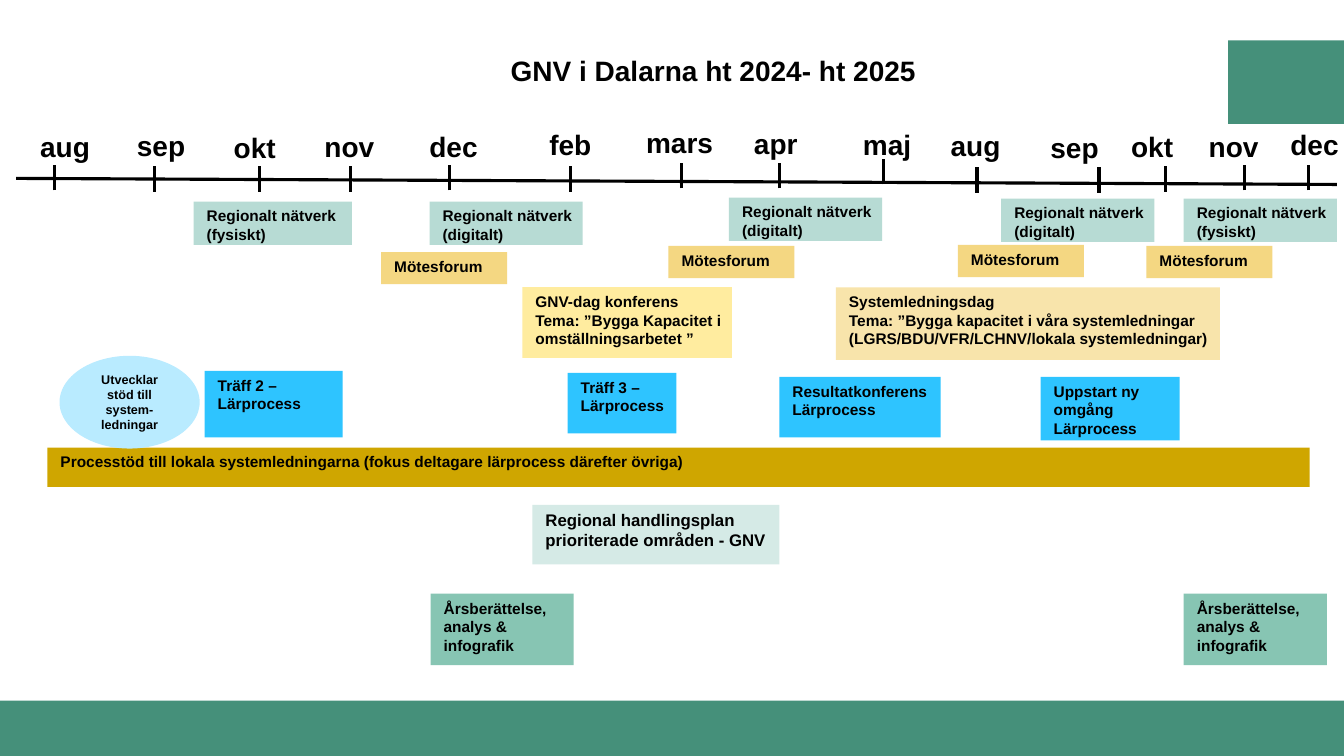
from dataclasses import dataclass
from typing import Any

import lxml.etree
import pptx
import pptx.dml.color
import pptx.enum.shapes
import pptx.enum.text
import pptx.oxml.ns
import pptx.util

Inches = pptx.util.Inches
Pt = pptx.util.Pt
Anchor = pptx.enum.text.MSO_ANCHOR
Align = pptx.enum.text.PP_ALIGN
Preset = pptx.enum.shapes.MSO_SHAPE

FONT = "Arial"
TICK_LENGTH = 0.25
AXIS_START, AXIS_END = (0.16, 1.77), (13.26, 1.83)

COLOURS = {
    "text": "000000",
    "brand": "45907A",
    "network": "B7DBD4",
    "forum": "F4D782",
    "conference": "FFEC9F",
    "leadership": "F8E4AB",
    "learning": "2EC4FF",
    "support": "B9EBFF",
    "process": "CFA600",
    "plan": "D5EAE6",
    "report": "87C5B3",
}

BOX_FRAME = {
    "word_wrap": True,
    "vertical_anchor": Anchor.TOP,
    "margin_left": Inches(0.13),
    "margin_right": Inches(0.08),
}
CENTRED_FRAME = {"word_wrap": True, "vertical_anchor": Anchor.MIDDLE}
TITLE_FRAME = {"word_wrap": True, "vertical_anchor": Anchor.BOTTOM}
LEFT_PARAGRAPH = {"alignment": Align.LEFT, "space_after": Pt(12)}
CENTRED_PARAGRAPH = {"alignment": Align.CENTER}
TITLE_PARAGRAPH = {"alignment": Align.CENTER, "line_spacing": 1.2, "space_before": Pt(10)}


@dataclass
class Month:
    name: str
    left: float
    top: float
    height: float
    tick_x: float
    tick_top: float


@dataclass
class Activity:
    text: str
    colour: str
    left: float
    top: float
    width: float
    height: float
    size: float = 11


MONTHS = [
    Month("aug", 0.3, 1.34, 0.22, 0.54, 1.64),
    Month("sep", 1.26, 1.33, 0.22, 1.53, 1.65),
    Month("okt", 2.22, 1.35, 0.22, 2.57, 1.65),
    Month("nov", 3.12, 1.34, 0.22, 3.48, 1.65),
    Month("dec", 4.16, 1.3, 0.3, 4.46, 1.64),
    Month("feb", 5.35, 1.28, 0.3, 5.66, 1.65),
    Month("mars", 6.31, 1.26, 0.3, 6.76, 1.62),
    Month("apr", 7.38, 1.26, 0.32, 7.73, 1.62),
    Month("maj", 8.46, 1.27, 0.32, 8.76, 1.58),
    Month("aug", 9.33, 1.33, 0.22, 9.69, 1.66),
    Month("sep", 10.32, 1.35, 0.22, 10.9, 1.66),
    Month("okt", 11.12, 1.34, 0.22, 11.56, 1.65),
    Month("nov", 11.89, 1.34, 0.22, 12.34, 1.64),
    Month("dec", 12.7, 1.32, 0.22, 12.98, 1.64),
]

NETWORK_MEETINGS = [
    Activity(f"Regionalt nätverk ({form})", "network", left, top, width, 0.43)
    for form, left, top, width in [
        ("fysiskt", 1.92, 2, 1.57),
        ("digitalt", 4.26, 2, 1.52),
        ("digitalt", 7.23, 1.96, 1.52),
        ("digitalt", 9.93, 1.97, 1.52),
        ("fysiskt", 11.74, 1.97, 1.52),
    ]
]
FORUMS = [
    Activity("Mötesforum", "forum", left, top, 1.25, 0.32)
    for left, top in [(3.78, 2.5), (6.63, 2.44), (9.5, 2.43), (11.37, 2.44)]
]
REPORTS = [
    Activity("Årsberättelse, analys & infografik", "report", left, 5.89, 1.42, 0.71)
    for left in (4.27, 11.74)
]
ACTIVITIES = [
    *NETWORK_MEETINGS,
    *FORUMS,
    Activity("GNV-dag konferens Tema: ”Bygga Kapacitet i omställningsarbetet ”",
             "conference", 5.18, 2.85, 2.08, 0.7),
    Activity("Systemledningsdag\vTema: ”Bygga kapacitet i våra systemledningar\v"
             "(LGRS/BDU/VFR/LCHNV/lokala systemledningar)",
             "leadership", 8.29, 2.85, 3.81, 0.72),
    Activity("Träff 2 – Lärprocess", "learning", 2.03, 3.68, 1.37, 0.66),
    Activity("Träff 3 – Lärprocess", "learning", 5.63, 3.7, 1.08, 0.6),
    Activity("Resultatkonferens Lärprocess", "learning", 7.73, 3.74, 1.6, 0.6),
    Activity("Uppstart ny omgång Lärprocess", "learning", 10.32, 3.74, 1.38, 0.63),
    Activity("Processtöd till lokala systemledningarna "
             "(fokus deltagare lärprocess därefter övriga)",
             "process", 0.47, 4.44, 12.52, 0.39),
    Activity("Regional handlingsplan prioriterade områden - GNV",
             "plan", 5.28, 5.01, 2.45, 0.59, 12),
    *REPORTS,
]
SUPPORT = Activity("Utvecklar stöd till system-ledningar", "support",
                   0.59, 3.53, 1.39, 0.92, 9)
BRAND_BLOCKS = [
    Activity("", "brand", 0, 6.95, 13.33, 0.55),
    Activity("", "brand", 12.18, 0.4, 1.15, 0.83),
]


def colour_of(name: str) -> pptx.dml.color.RGBColor:
    return pptx.dml.color.RGBColor.from_string(COLOURS[name])


def apply(target: Any, values: dict[str, Any]) -> None:
    """Set each named attribute of the target."""
    for name, value in values.items():
        setattr(target, name, value)


def write_text(shape: Any, text: str, size: float, frame_format: dict[str, Any],
               paragraph_format: dict[str, Any]) -> None:
    frame = shape.text_frame
    apply(frame, frame_format)
    paragraph = frame.paragraphs[0]
    paragraph.text = text
    apply(paragraph, paragraph_format)
    for run in paragraph.runs:
        apply(run.font, {"name": FONT, "size": Pt(size), "bold": True})
        run.font.color.rgb = colour_of("text")


def add_label(slide: Any, text: str, left: float, top: float, width: float, height: float,
              frame_format: dict[str, Any], paragraph_format: dict[str, Any]) -> None:
    shape = slide.shapes.add_textbox(Inches(left), Inches(top), Inches(width), Inches(height))
    write_text(shape, text, 20, frame_format, paragraph_format)


def add_activity(slide: Any, activity: Activity, preset: Any = Preset.RECTANGLE,
                 frame_format: dict[str, Any] = BOX_FRAME,
                 paragraph_format: dict[str, Any] = LEFT_PARAGRAPH) -> None:
    shape = slide.shapes.add_shape(preset, Inches(activity.left), Inches(activity.top),
                                   Inches(activity.width), Inches(activity.height))
    shape.shadow.inherit = False
    shape.fill.solid()
    shape.fill.fore_color.rgb = colour_of(activity.colour)
    shape.line.fill.background()
    if activity.text:
        write_text(shape, activity.text, activity.size, frame_format, paragraph_format)


def add_line(slide: Any, start: tuple[float, float], end: tuple[float, float]) -> None:
    connector = slide.shapes.add_connector(pptx.enum.shapes.MSO_CONNECTOR.STRAIGHT,
                                           *map(Inches, (*start, *end)))
    connector.line.color.rgb = colour_of("text")
    connector.line.width = Pt(2.25)
    properties = connector.element.spPr
    lxml.etree.SubElement(properties, pptx.oxml.ns.qn("a:effectLst"))


def main() -> None:
    presentation = pptx.Presentation()
    apply(presentation, {"slide_width": Inches(13.33), "slide_height": Inches(7.5)})
    slide = presentation.slides.add_slide(presentation.slide_layouts[6])

    for block in BRAND_BLOCKS:
        add_activity(slide, block)
    add_label(slide, "GNV i Dalarna ht 2024- ht 2025", 3.48, 0.4, 7.19, 0.51,
              TITLE_FRAME, TITLE_PARAGRAPH)

    add_line(slide, AXIS_START, AXIS_END)
    for month in MONTHS:
        width = 0.87 if month.height == 0.22 else 0.94
        add_label(slide, month.name, month.left, month.top, width, month.height,
                  CENTRED_FRAME, LEFT_PARAGRAPH)
        add_line(slide, (month.tick_x, month.tick_top + TICK_LENGTH),
                 (month.tick_x, month.tick_top))

    for activity in ACTIVITIES:
        add_activity(slide, activity)
    add_activity(slide, SUPPORT, Preset.OVAL, CENTRED_FRAME, CENTRED_PARAGRAPH)

    presentation.save("out.pptx")


if __name__ == "__main__":
    main()
